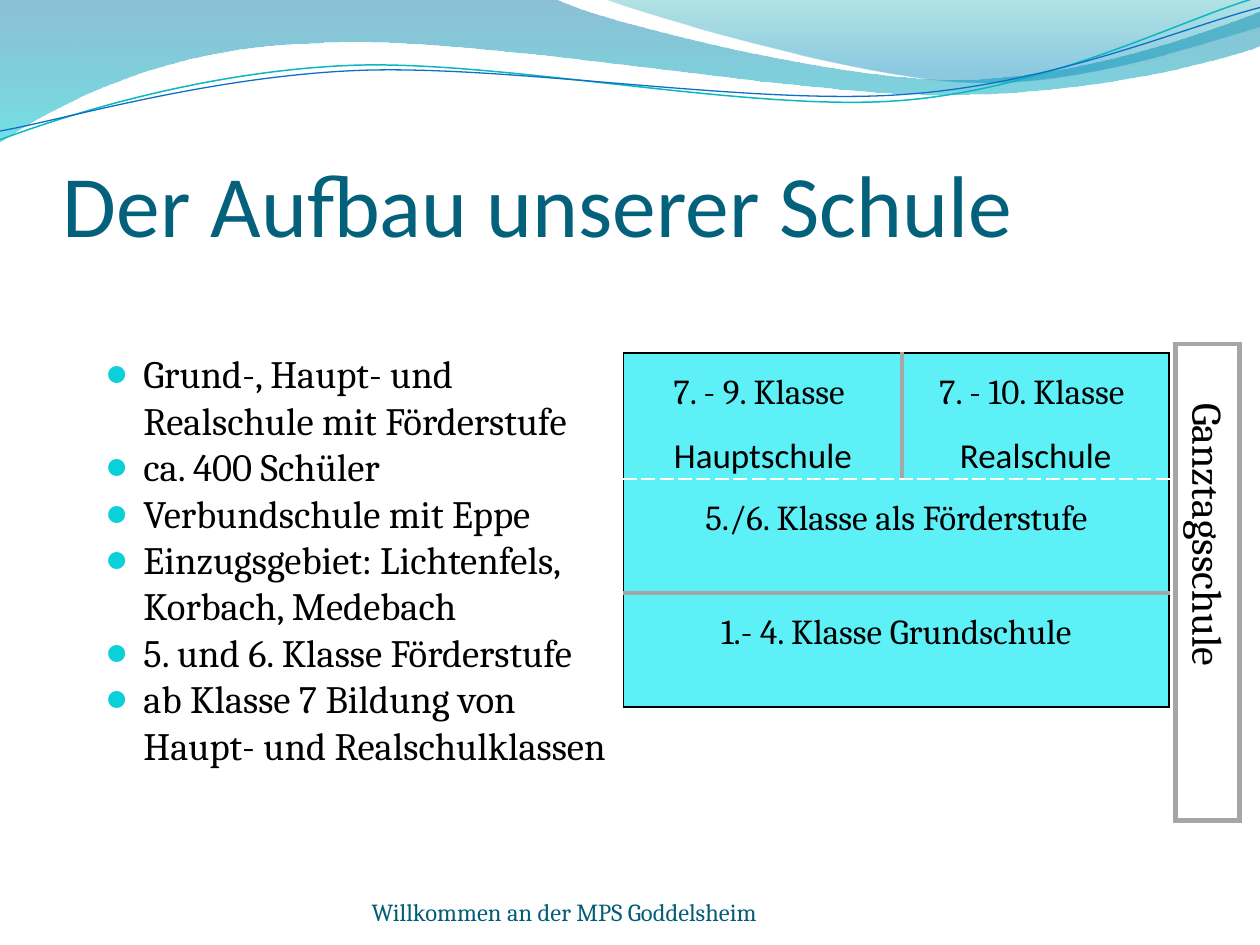
"""Build the slide that shows how the school is organised."""
from dataclasses import dataclass

from lxml.etree import SubElement
from pptx import Presentation
from pptx.dml.color import RGBColor
from pptx.enum.text import MSO_ANCHOR, PP_ALIGN
from pptx.oxml.ns import qn
from pptx.util import Inches, Pt

TEXT, TITLE, FOOTER = "000000", "04617B", "045D75"
BULLET, CELL, GREY, WHITE = "0BD0D9", "5EF0F7", "A6A6A6", "FFFFFF"


@dataclass
class Wave:
    start: tuple
    steps: list
    stops: tuple = ()
    line: tuple = ()


@dataclass
class Border:
    color: str
    width: float
    dash: str = "solid"


@dataclass
class Label:
    box: tuple
    lines: list
    size: float
    font: str
    color: str
    anchor: MSO_ANCHOR = MSO_ANCHOR.TOP
    insets: tuple = (0, 0, 0, 0)
    bulleted: bool = False


@dataclass
class Level:
    cells: list
    top: Border
    bottom: Border


THIN, THICK = Border(TEXT, 1), Border(GREY, 3)
DASHED = Border(WHITE, 1, "sysDash")

WAVES = [
    Wave((0, 0), [(4.4, -0.01), (4.76, 0.17, 6.64, 0.63, 7.58, 0.63),
                  (8.53, 0.63, 9.58, 0.26, 10, 0.09), (10.01, 0.36),
                  (9.83, 0.44, 8.7, 0.76, 7.46, 0.75),
                  (6.22, 0.75, 3.82, 0.28, 2.57, 0.34),
                  (1.29, 0.36, 0.46, 0.83, -0.01, 1.13)],
         stops=((0, "0074A1", 45), (1, "00C6CF", 55))),
    Wave((4.79, -0.01), [(5.09, 0.11, 6.82, 0.62, 7.69, 0.65),
                         (8.56, 0.69, 9.61, 0.32, 10, 0.21), (10, 0)],
         stops=((0, "00A1A9", 30), (0.8, "008BBF", 45))),
    Wave((0, 1.11), [(0.48, 0.93, 1.58, 0.57, 2.77, 0.52),
                     (3.95, 0.47, 5.93, 0.89, 7.13, 0.8),
                     (8.33, 0.71, 9.38, 0.15, 9.98, -0.02)], line=("0AB8BF", 0.85)),
    Wave((0, 1.04), [(0.47, 0.96, 1.64, 0.61, 2.83, 0.56),
                     (4.03, 0.51, 5.97, 0.84, 7.17, 0.75),
                     (8.36, 0.67, 9.41, 0.21, 10, 0.06)], line=("0F6FC6", 0.75)),
]

LABELS = [
    Label((0.5, 0.77, 9, 1.25), ["Der Aufbau unserer Schule"], 50, "Calibri", TITLE,
          MSO_ANCHOR.BOTTOM, (0, 0.05, 0, 0)),
    Label((0.74, 2.73, 4.18, 3.7),
          ["Grund-, Haupt- und Realschule mit Förderstufe", "ca. 400 Schüler",
           "Verbundschule mit Eppe", "Einzugsgebiet: Lichtenfels, Korbach, Medebach",
           "5. und 6. Klasse Förderstufe",
           "ab Klasse 7 Bildung von Haupt- und Realschulklassen"],
          22.1, "Cambria", TEXT, insets=(0.1, 0.05, 0.1, 0.05), bulleted=True),
    Label((2.95, 6.98, 3.63, 0.37), ["Willkommen an der MPS Goddelsheim"], 14,
          "Cambria", FOOTER, MSO_ANCHOR.BOTTOM),
]

LEVELS = [
    Level([["7. - 9. Klasse ", "Hauptschule"], ["7. - 10. Klasse ", "Realschule"]],
          THIN, DASHED),
    Level([["5./6. Klasse als Förderstufe"]], DASHED, THICK),
    Level([["1.- 4. Klasse Grundschule"]], THICK, THIN),
]


def rgb(color: str) -> RGBColor:
    return RGBColor.from_string(color)


def apply_format(target, values: dict) -> None:
    for name, value in values.items():
        setattr(target, name, value)


def set_margins(target, insets: tuple) -> None:
    names = ("margin_left", "margin_top", "margin_right", "margin_bottom")
    apply_format(target, dict(zip(names, map(Inches, insets))))


def add_run(paragraph, text: str, size: float, font: str, color: str) -> None:
    run = paragraph.add_run()
    run.text = text
    apply_format(run.font, {"size": Pt(size), "name": font})
    run.font.color.rgb = rgb(color)


def bend_segments(shape, steps: list) -> None:
    segments = iter(list(shape.element.iter(qn("a:lnTo"))))
    for step in steps:
        segment = next(segments)
        if len(step) == 6:
            segment.tag = qn("a:cubicBezTo")
            for _ in range(2):
                extra = next(segments)
                segment.append(extra[0])
                extra.getparent().remove(extra)


def add_wave(slide, wave: Wave) -> None:
    points = [tuple(map(Inches, step[index:index + 2]))
              for step in wave.steps for index in range(0, len(step), 2)]
    builder = slide.shapes.build_freeform(*map(Inches, wave.start))
    builder.add_line_segments(points, close=bool(wave.stops))
    shape = builder.convert_to_shape()
    bend_segments(shape, wave.steps)
    shape.shadow.inherit = False
    if wave.line:
        color, width = wave.line
        shape.fill.background()
        shape.line.color.rgb = rgb(color)
        shape.line.width = Pt(width)
        return
    shape.line.fill.background()
    shape.fill.gradient()
    shape.fill.gradient_angle = 270
    for stop, (position, color, _) in zip(shape.fill.gradient_stops, wave.stops):
        stop.position = position
        stop.color.rgb = rgb(color)
    colors = shape.element.iter(qn("a:srgbClr"))
    for element, (_, _, opacity) in zip(list(colors), wave.stops):
        SubElement(element, qn("a:alpha"), val=str(opacity * 1000))


def add_bullet(paragraph) -> None:
    properties = paragraph._p.get_or_add_pPr()
    properties.set("marL", str(Inches(0.3)))
    properties.set("indent", str(Inches(-0.3)))
    SubElement(SubElement(properties, qn("a:buClr")), qn("a:srgbClr"), val=BULLET)
    SubElement(properties, qn("a:buSzPct"), val="95000")
    SubElement(properties, qn("a:buFont"), typeface="Calibri")
    SubElement(properties, qn("a:buChar"), char="●")


def add_label(slide, label: Label) -> None:
    frame = slide.shapes.add_textbox(*map(Inches, label.box)).text_frame
    apply_format(frame, {"word_wrap": True, "vertical_anchor": label.anchor})
    set_margins(frame, label.insets)
    for index, line in enumerate(label.lines):
        paragraph = frame.add_paragraph() if index else frame.paragraphs[0]
        add_run(paragraph, line, label.size, label.font, label.color)
        if label.bulleted:
            add_bullet(paragraph)


def add_table(slide, box: tuple, rows: int, columns: int):
    table = slide.shapes.add_table(rows, columns, *map(Inches, box)).table
    apply_format(table, {"first_row": False, "horz_banding": False})
    return table


def set_borders(cell, *borders: Border) -> None:
    properties = cell._tc.get_or_add_tcPr()
    for side, border in zip("LRTB", borders):
        line = SubElement(properties, qn(f"a:ln{side}"), w=str(Pt(border.width)))
        fill = SubElement(line, qn("a:solidFill"))
        SubElement(fill, qn("a:srgbClr"), val=border.color)
        SubElement(line, qn("a:prstDash"), val=border.dash)


def add_levels(slide) -> None:
    table = add_table(slide, (4.95, 2.8, 4.33, 2.72), len(LEVELS), 2)
    for column, width in zip(table.columns, (2.21, 2.12)):
        column.width = Inches(width)
    for row, level in enumerate(LEVELS):
        split = len(level.cells) == 2
        if not split:
            table.cell(row, 0).merge(table.cell(row, 1))
        for column in (0, 1):
            cell = table.cell(row, column)
            left, right = (THIN, THICK) if column == 0 else (THICK, THIN)
            set_borders(cell, left if split else THIN, right if split else THIN,
                        level.top, level.bottom)
            cell.fill.solid()
            cell.fill.fore_color.rgb = rgb(CELL)
            set_margins(cell, (0.05, 0, 0.05, 0))
        for column, lines in enumerate(level.cells):
            frame = table.cell(row, column).text_frame
            for index, (line, font) in enumerate(zip(lines, ("Cambria", "Calibri"))):
                paragraph = frame.add_paragraph() if index else frame.paragraphs[0]
                apply_format(paragraph, {"alignment": PP_ALIGN.CENTER, "line_spacing": 1.5})
                add_run(paragraph, line, 20, font, TEXT)


def add_all_day_bar(slide) -> None:
    cell = add_table(slide, (9.33, 2.73, 0.51, 3.78), 1, 1).cell(0, 0)
    set_borders(cell, *[THICK] * 4)
    cell.fill.background()
    cell._tc.get_or_add_tcPr().set("vert", "vert")
    paragraph = cell.text_frame.paragraphs[0]
    paragraph._p.get_or_add_pPr().set("marL", str(Inches(0.37)))
    add_run(paragraph, "Ganztagsschule", 24, "Cambria", TEXT)


def main() -> None:
    presentation = Presentation()
    apply_format(presentation, {"slide_width": Inches(10), "slide_height": Inches(7.5)})
    slide = presentation.slides.add_slide(presentation.slide_layouts[6])
    for wave in WAVES:
        add_wave(slide, wave)
    for label in LABELS:
        add_label(slide, label)
    add_levels(slide)
    add_all_day_bar(slide)
    presentation.save("out.pptx")


if __name__ == "__main__":
    main()
